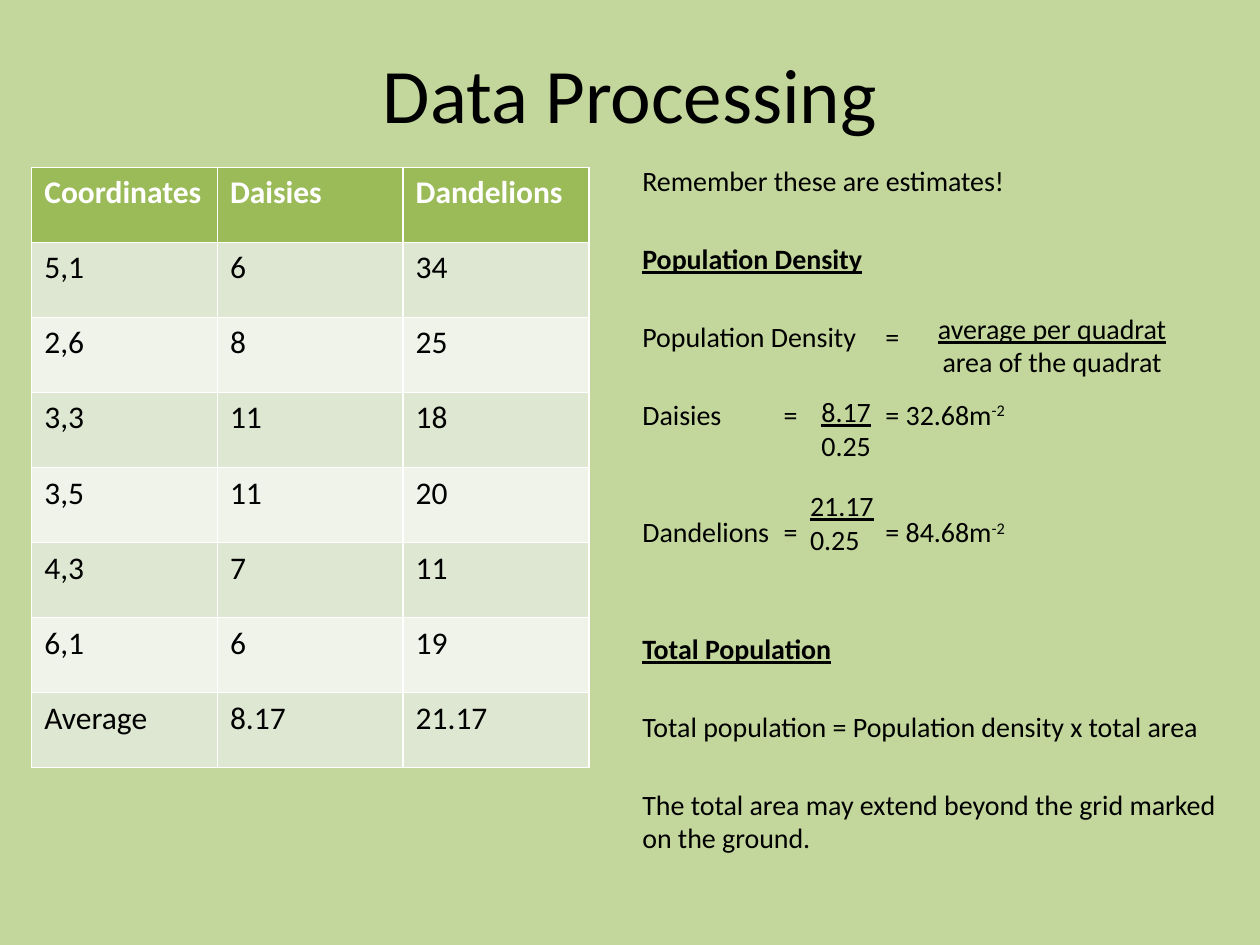
from collections import namedtuple

from pptx import Presentation
from pptx.dml.color import RGBColor
from pptx.enum.text import MSO_ANCHOR as Anchor, PP_ALIGN as Align
from pptx.util import Cm, Pt

COLORS = {
    "background": "C3D69B",
    "text": "000000",
    "header": "9BBB59",
    "header_text": "FFFFFF",
    "odd_row": "DEE7D1",
    "even_row": "EFF3EA",
}
FONT = "Calibri"
BODY_SIZE = 16
LINE_HEIGHT = 19.5
LINE_PITCH = 22.4
EQUALS_STOPS = (2.85, 4.9)

Box = namedtuple("Box", "left top width height")

COUNTS = [
    ("Coordinates", "Daisies", "Dandelions"),
    ("5,1", "6", "34"),
    ("2,6", "8", "25"),
    ("3,3", "11", "18"),
    ("3,5", "11", "20"),
    ("4,3", "7", "11"),
    ("6,1", "6", "19"),
    ("Average", "8.17", "21.17"),
]

# Each line: text, superscript, lines down from the one before, heading
WORKING = [
    ("Remember these are estimates!", "", 0, False),
    ("Population Density", "", 2, True),
    ("Population Density\t=", "", 2, False),
    ("Daisies\t=\t= 32.68m", "-2", 2, False),
    ("Dandelions\t=\t= 84.68m", "-2", 3, False),
    ("Total Population", "", 3, True),
    ("Total population = Population density x total area", "", 2, False),
    ("The total area may extend beyond the grid marked on the ground.", "", 2, False),
]

FRACTIONS = [
    (Box(5.92, 2.97, 5.18, 1.63), "average per quadrat", "area of the quadrat", Align.CENTER),
    (Box(3.61, 4.65, 1.52, 1.63), "8.17", "0.25", Align.LEFT),
    (Box(3.38, 6.55, 1.8, 1.63), "21.17", "0.25", Align.LEFT),
]


def rgb(name):
    return RGBColor.from_string(COLORS[name])


def style(font, size, color="text", bold=False, underline=False):
    font.name = FONT
    font.size = Pt(size)
    font.bold = bold
    font.underline = underline
    font.color.rgb = rgb(color)


def add_text_frame(slide, box, wrap=True):
    frame = slide.shapes.add_textbox(*map(Cm, box)).text_frame
    frame.word_wrap = wrap
    return frame


def add_title(slide, box, title):
    frame = add_text_frame(slide, box)
    frame.vertical_anchor = Anchor.MIDDLE
    frame.text = title
    frame.paragraphs[0].alignment = Align.CENTER
    style(frame.paragraphs[0].runs[0].font, 44)


def add_counts_table(slide, box, counts):
    table = slide.shapes.add_table(len(counts), len(counts[0]), *map(Cm, box)).table
    for r, row in enumerate(counts):
        is_header = r == 0
        fill = "header" if is_header else "odd_row" if r % 2 else "even_row"
        for c, value in enumerate(row):
            cell = table.cell(r, c)
            cell.text = value
            cell.fill.solid()
            cell.fill.fore_color.rgb = rgb(fill)
            style(cell.text_frame.paragraphs[0].runs[0].font, 18,
                  "header_text" if is_header else "text", bold=is_header)


def add_equals_stops(paragraph):
    properties = paragraph._p.get_or_add_pPr()
    stops = properties.makeelement(properties.tag.replace("pPr", "tabLst"), {})
    for position in EQUALS_STOPS:
        stops.append(stops.makeelement(stops.tag.replace("tabLst", "tab"),
                                       {"pos": str(Cm(position)), "algn": "l"}))
    properties.append(stops)


def add_fraction(slide, box, numerator, denominator, alignment):
    frame = add_text_frame(slide, box, wrap=False)
    frame.text = f"{numerator}\n{denominator}"
    for paragraph, underline in zip(frame.paragraphs, (True, False)):
        paragraph.alignment = alignment
        style(paragraph.runs[0].font, BODY_SIZE, underline=underline)


def add_working(slide, box, lines, fractions):
    frame = add_text_frame(slide, box)
    frame.text = "\n".join(line[0] for line in lines)
    for paragraph, (text, superscript, steps, heading) in zip(frame.paragraphs, lines):
        if steps:
            paragraph.space_before = Pt(steps * LINE_PITCH - LINE_HEIGHT)
        if "\t" in text:
            add_equals_stops(paragraph)
        if superscript:
            power = paragraph.add_run()
            power.text = superscript
            power._r.get_or_add_rPr().set("baseline", "30000")
        for run in paragraph.runs:
            style(run.font, BODY_SIZE, bold=heading, underline=heading)
    for place, numerator, denominator, alignment in fractions:
        inner = place._replace(left=box.left + place.left, top=box.top + place.top)
        add_fraction(slide, inner, numerator, denominator, alignment)


def main():
    deck = Presentation()
    deck.slide_width, deck.slide_height = Cm(25.4), Cm(19.05)
    slide = deck.slides.add_slide(deck.slide_layouts[6])
    slide.background.fill.solid()
    slide.background.fill.fore_color.rgb = rgb("background")
    add_title(slide, Box(1.27, 0.76, 22.86, 2.21), "Data Processing")
    add_working(slide, Box(12.7, 3.18, 12.5, 13.84), WORKING, FRACTIONS)
    add_counts_table(slide, Box(0.64, 3.38, 11.23, 12.1), COUNTS)
    deck.save("out.pptx")


if __name__ == "__main__":
    main()
